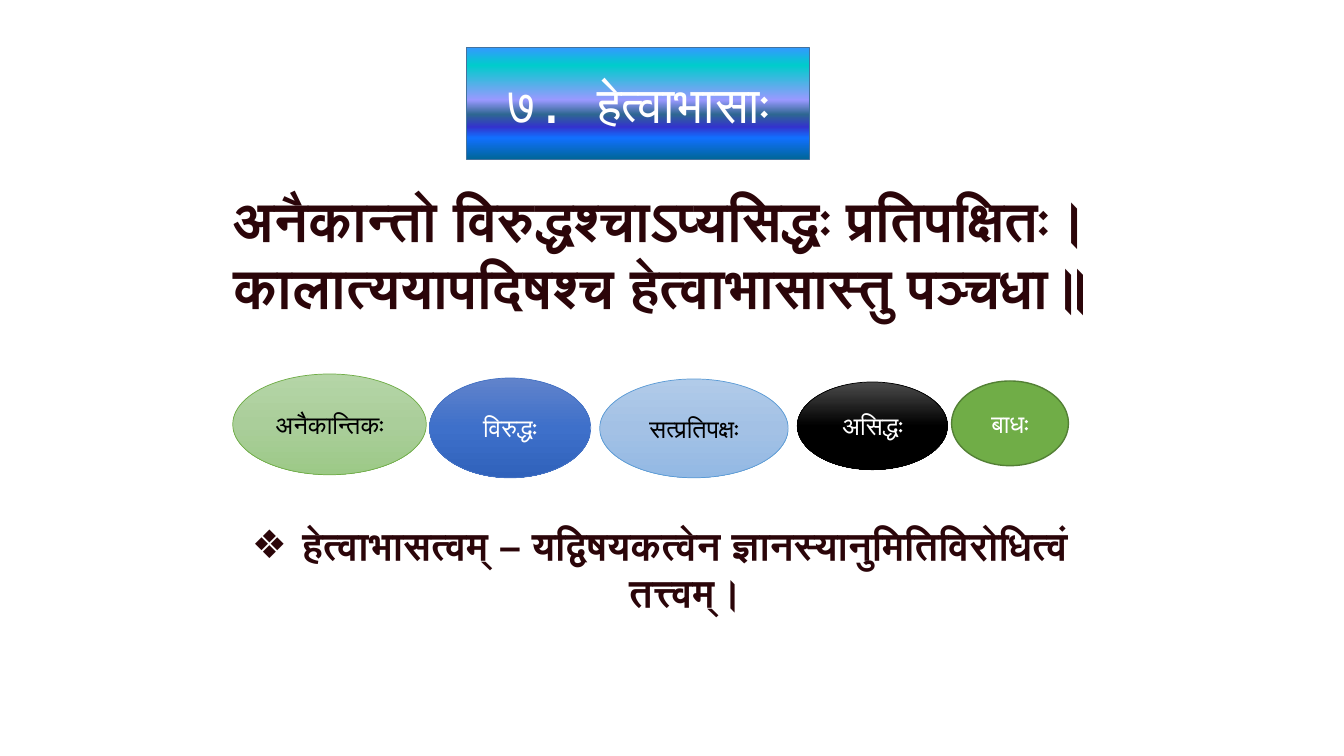
from dataclasses import dataclass
from lxml.etree import SubElement
from pptx import Presentation
from pptx.dml.color import RGBColor
from pptx.enum.shapes import MSO_SHAPE
from pptx.enum.text import MSO_ANCHOR, PP_ALIGN
from pptx.oxml.ns import qn
from pptx.util import Inches, Pt


@dataclass(frozen=True)
class Theme:
    """Colours, fonts and type sizes of the slide."""
    ink: str = "2B0509"
    white: str = "FFFFFF"
    black: str = "000000"
    verse: int = 40
    title: int = 36
    rule: int = 28
    label: int = 18
    script: str = "Arial"
    mono: str = "DejaVu Sans Mono"
    sans: str = "Calibri"
    banner: tuple = ((0, "3399FF"), (16, "00CCCC"), (47, "9999FF"), (60, "2E6792"),
                     (71, "3333CC"), (81, "1170FF"), (100, "006699"))
    edge: str = "43739E"
    lime: tuple = ((0, "B5D5A7"), (50, "AACE9A"), (100, "9CC987"))
    blue: tuple = ((0, "6183CB"), (50, "3E70CA"), (100, "3062BB"))
    sky: tuple = ((0, "B1CBE9"), (50, "A3C1E5"), (100, "93B9E4"))
    coal: tuple = ((0, "4B4B4B"), (50, "000000"), (100, "000000"))
    green: tuple = ((0, "70AD47"),)


THEME = Theme()
WIDE, HIGH = Inches(13.33), Inches(7.5)
VERSE = ("अनैकान्तो विरुद्धश्चाऽप्यसिद्धः प्रतिपक्षितः।",
         "कालात्ययापदिषश्च हेत्वाभासास्तु पञ्चधा॥")
RULE = "हेत्वाभासत्वम् – यद्विषयकत्वेन ज्ञानस्यानुमितिविरोधित्वं तत्त्वम्।"
KINDS = (
    ("अनैकान्तिकः", (17.32, 49.47, 14.4, 13.33), THEME.lime, "70AD47", 0.5, THEME.black, THEME.mono),
    ("विरुद्धः", (31.95, 50, 12, 13.2), THEME.blue, "4472C4", 0.5, THEME.white, THEME.mono),
    ("सत्प्रतिपक्षः", (44.62, 50.13, 14.02, 13.07), THEME.sky, "5B9BD5", 0.5, THEME.black, THEME.mono),
    ("असिद्धः", (59.32, 50.53, 11.18, 11.6), THEME.coal, "000000", 0.5, THEME.white, THEME.mono),
    ("बाधः", (70.8, 50.4, 8.7, 11.2), THEME.green, "538035", 1, THEME.white, THEME.sans),
)


def place(area):
    """Turn percent shares of the slide into lengths."""
    return [int(part * side / 100) for part, side in zip(area, (WIDE, HIGH) * 2)]


def apply(thing, style):
    """Set each named value on an object."""
    for name, value in style.items():
        setattr(thing, name, value)


def write(para, text, size, face, tint, bold=False):
    """Put one centred run into a paragraph, with Devanagari letters joined."""
    para.alignment = PP_ALIGN.CENTER
    run = para.add_run()
    run.text = text
    apply(run.font, {"size": Pt(size), "name": face, "bold": bold})
    run.font.color.rgb = RGBColor.from_string(tint)
    SubElement(run.font._element, qn("a:cs"), typeface=THEME.script)


def paint(shape, stops):
    """Fill with one colour or with stops from top to bottom."""
    if len(stops) == 1:
        shape.fill.solid()
        shape.fill.fore_color.rgb = RGBColor.from_string(stops[0][1])
        return
    shape.fill.gradient()
    shape.fill.gradient_angle = 270
    ramp = next(shape._element.spPr.iter(qn("a:gsLst")))
    for stop in list(ramp):
        ramp.remove(stop)
    for share, tint in stops:
        stop = SubElement(ramp, qn("a:gs"), pos=str(share * 1000))
        SubElement(stop, qn("a:srgbClr"), val=tint)


def badge(slide, form, area, stops, edge, thick, text, size, face, tint):
    """Draw a filled shape with a centred label."""
    shape = slide.shapes.add_shape(form, *place(area))
    shape.shadow.inherit = False
    paint(shape, stops)
    shape.line.width = Pt(thick)
    shape.line.color.rgb = RGBColor.from_string(edge)
    apply(shape.text_frame, {"word_wrap": True, "vertical_anchor": MSO_ANCHOR.MIDDLE})
    write(shape.text_frame.paragraphs[0], text, size, face, tint)


def mark(para, sign):
    """Give a paragraph a hanging bullet."""
    props = para._p.get_or_add_pPr()
    props.set("marL", str(Inches(0.5)))
    props.set("indent", str(-Inches(0.5)))
    SubElement(props, qn("a:buFont"), typeface=THEME.script)
    SubElement(props, qn("a:buChar"), char=sign)


def prose(slide, area):
    """Write the verse and the bulleted rule below it."""
    frame = slide.shapes.add_textbox(*place(area)).text_frame
    frame.word_wrap = True
    first = frame.paragraphs[0]
    for para, line in zip((first, frame.add_paragraph()), VERSE):
        write(para, line, THEME.verse, THEME.script, THEME.ink, True)
    last = frame.add_paragraph()
    last.space_before = Pt(144)
    write(last, RULE, THEME.rule, THEME.script, THEME.ink, True)
    mark(last, "❖")


def main():
    """Build and save the slide."""
    deck = Presentation()
    apply(deck, {"slide_width": WIDE, "slide_height": HIGH})
    slide = deck.slides.add_slide(deck.slide_layouts[6])
    prose(slide, (13.65, 23.87, 70.88, 52.53))
    badge(slide, MSO_SHAPE.RECTANGLE, (34.72, 6.27, 25.5, 14.8), THEME.banner, THEME.edge, 1,
          "७. हेत्वाभासाः", THEME.title, THEME.mono, THEME.white)
    for text, area, stops, edge, thick, tint, face in KINDS:
        badge(slide, MSO_SHAPE.OVAL, area, stops, edge, thick, text, THEME.label, face, tint)
    deck.save("out.pptx")


if __name__ == "__main__":
    main()
